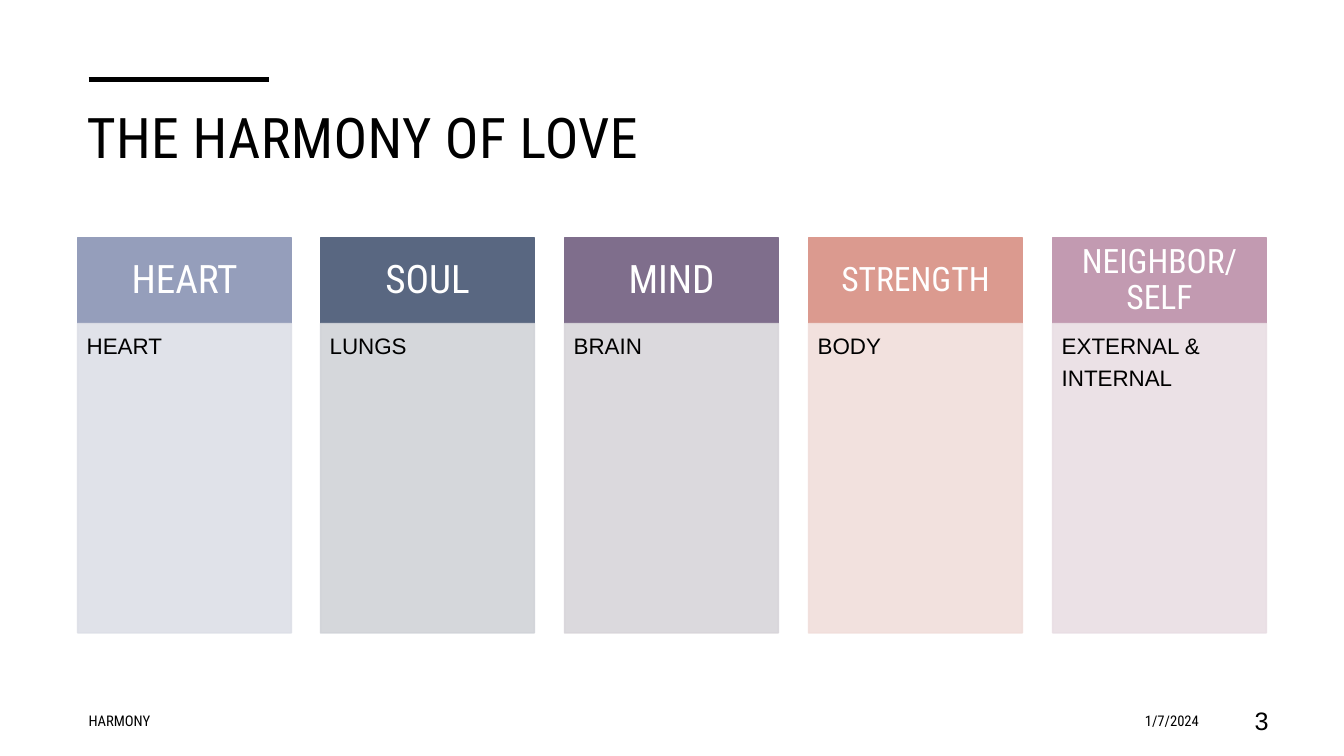
"""Build the slide on the harmony of love: five coloured columns."""
import pptx
import pptx.dml.color
import pptx.enum.shapes
import pptx.enum.text
import pptx.oxml
import pptx.oxml.ns
import pptx.util

RGB = pptx.dml.color.RGBColor
ALIGN = pptx.enum.text.PP_ALIGN
ANCHOR = pptx.enum.text.MSO_ANCHOR
qn = pptx.oxml.ns.qn

PX = 9144
BLACK = RGB(0x00, 0x00, 0x00)
WHITE = RGB(0xFF, 0xFF, 0xFF)
HEAD_FONT = "Roboto Condensed"
BODY_FONT = "Arial"

FIRST_LEFT, LAST_LEFT, COLUMN_W = 77, 1044, 212
HEAD_TOP, HEAD_H, BODY_H = 236, 85, 307

COLUMNS = [
    ("HEART", 28, ["HEART"], RGB(0x95, 0x9E, 0xBB), RGB(0xDD, 0xDF, 0xE7)),
    ("SOUL", 28, ["LUNGS"], RGB(0x59, 0x67, 0x81), RGB(0xD1, 0xD3, 0xD8)),
    ("MIND", 28, ["BRAIN"], RGB(0x7F, 0x6E, 0x8C), RGB(0xD8, 0xD5, 0xDA)),
    ("STRENGTH", 24, ["BODY"], RGB(0xDB, 0x9A, 0x8F), RGB(0xF1, 0xDE, 0xDB)),
    ("NEIGHBOR/SELF", 24, ["EXTERNAL &", "INTERNAL"],
     RGB(0xC2, 0x9A, 0xB1), RGB(0xE9, 0xDE, 0xE4)),
]


def px(*values):
    """Turn px lengths into EMU."""
    return [pptx.util.Emu(v * PX) for v in values]


def write(tf, lines, size, font, color, align=ALIGN.LEFT, anchor=ANCHOR.MIDDLE):
    """Write one formatted paragraph per line and return the paragraphs."""
    tf.word_wrap = True
    tf.vertical_anchor = anchor
    tf.text = "\n".join(lines)
    for p in tf.paragraphs:
        p.alignment = align
        p.font.size = pptx.util.Pt(size)
        p.font.name = font
        p.font.color.rgb = color
    return tf.paragraphs


def set_insets(tf, left, top, right, bottom):
    """Set the text margins in px."""
    tf.margin_left, tf.margin_top, tf.margin_right, tf.margin_bottom = px(
        left, top, right, bottom)


def add_block(s, left, top, height, color, alpha=100):
    """Add a column rectangle whose fill and line share a colour."""
    sp = s.shapes.add_shape(pptx.enum.shapes.MSO_SHAPE.RECTANGLE,
                            *px(left, top, COLUMN_W, height))
    sp.shadow.inherit = False
    sp.fill.solid()
    sp.fill.fore_color.rgb = color
    sp.line.color.rgb = color
    sp.line.width = pptx.util.Pt(1)
    if alpha < 100:
        for clr in sp._element.spPr.iter(qn("a:srgbClr")):
            pptx.oxml.ns  # noqa
            clr.append(pptx.oxml.parse_xml(
                f'<a:alpha {pptx.oxml.ns.nsdecls("a")} val="{alpha * 1000}"/>'))
    return sp


def add_column(s, left, heading, size, lines, head_color, body_color):
    """Add a heading block with its body block below."""
    tf = add_block(s, left, HEAD_TOP, HEAD_H, head_color).text_frame
    set_insets(tf, 19, 11, 19, 11)
    for p in write(tf, [heading], size, HEAD_FONT, WHITE, ALIGN.CENTER):
        p.line_spacing = 0.9
    tf = add_block(s, left, HEAD_TOP + HEAD_H, BODY_H, body_color, 90).text_frame
    set_insets(tf, 9, 9, 12, 14)
    for p in write(tf, lines, 16, BODY_FONT, BLACK, anchor=ANCHOR.TOP):
        p.space_after = pptx.util.Pt(3)


def add_title(s, text):
    """Fill the title placeholder and draw the bar above it."""
    sp = s.shapes.title
    sp.left, sp.top, sp.width, sp.height = px(76, 97, 1181, 115)
    p, = write(sp.text_frame, [text], 40, HEAD_FONT, BLACK, anchor=ANCHOR.TOP)
    p.runs[0].font._element.set("spc", "30")
    bar = s.shapes.add_connector(pptx.enum.shapes.MSO_CONNECTOR.STRAIGHT,
                                 *px(88, 79, 267, 79))
    bar.line.color.rgb = BLACK
    bar.line.width = pptx.util.Pt(3.5)
    bar._element.spPr.append(pptx.oxml.parse_xml(
        f'<a:effectLst {pptx.oxml.ns.nsdecls("a")}/>'))


def add_footer(s, left, width, text, size, font, align):
    """Add one text box on the footer line."""
    sp = s.shapes.add_textbox(*px(left, 695, width, 40))
    write(sp.text_frame, [text], size, font, BLACK, align)


def main():
    """Build and save the slide."""
    prs = pptx.Presentation()
    prs.slide_width, prs.slide_height = px(1333, 750)
    s = prs.slides.add_slide(prs.slide_layouts[5])
    add_title(s, "THE HARMONY OF LOVE")
    for i, column in enumerate(COLUMNS):
        left = FIRST_LEFT + (LAST_LEFT - FIRST_LEFT) * i // (len(COLUMNS) - 1)
        add_column(s, left, *column)
    add_footer(s, 78, 496, "HARMONY", 10.5, HEAD_FONT, ALIGN.LEFT)
    add_footer(s, 915, 284, "1/7/2024", 10.5, HEAD_FONT, ALIGN.RIGHT)
    add_footer(s, 1194, 74, "3", 18, BODY_FONT, ALIGN.RIGHT)
    prs.save("out.pptx")


if __name__ == "__main__":
    main()
